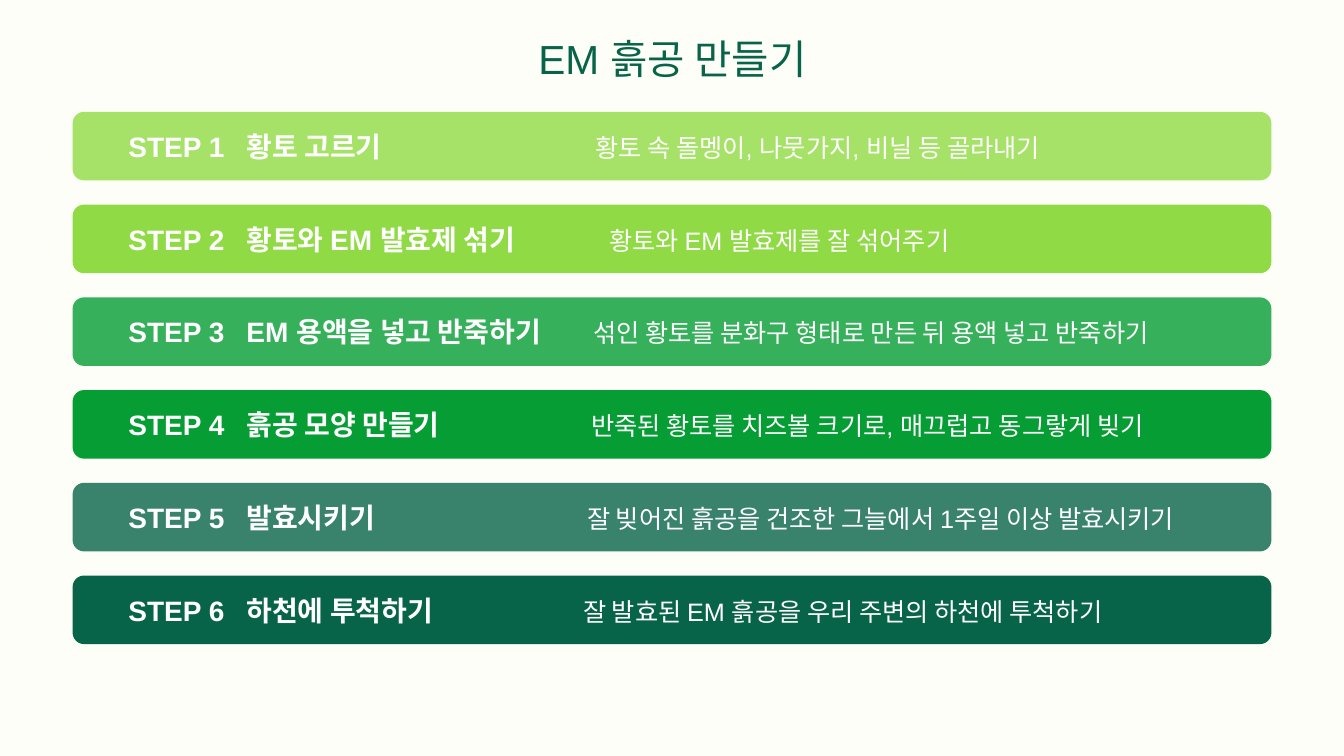
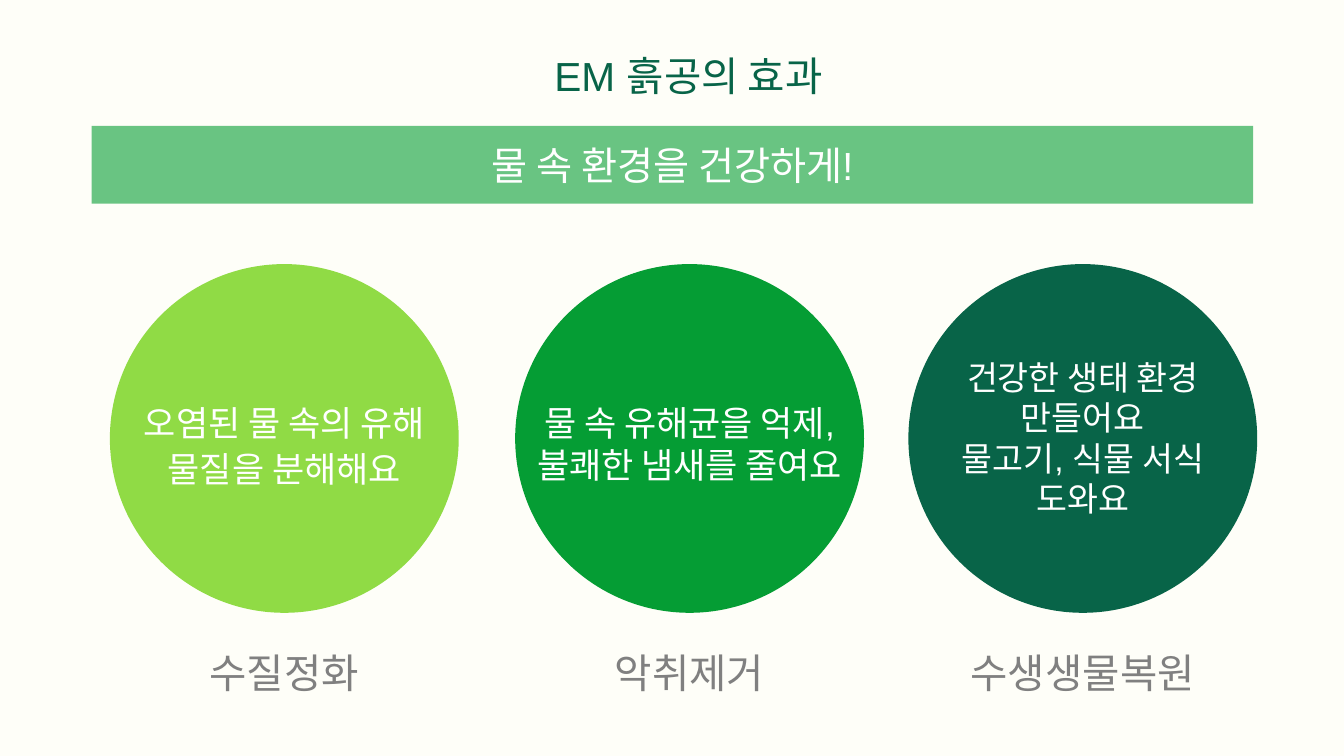
"""Two slides on EM soil balls: the six making steps and the three effects."""
from lxml.etree import SubElement
from pptx import Presentation
from pptx.dml.color import RGBColor
from pptx.enum.shapes import MSO_SHAPE
from pptx.enum.text import MSO_ANCHOR, PP_ALIGN
from pptx.oxml.ns import qn
from pptx.util import Inches, Pt

COLORS = {
    "paper": "FEFEF8", "white": "FFFFFF", "grey": "808080", "mint": "69C482",
    "lime": "90DB45", "green": "059D34", "forest": "086448",
}
STEPS_TITLE = "EM 흙공 만들기"
STEPS = [
    ("황토 고르기", "황토 속 돌멩이, 나뭇가지, 비닐 등 골라내기", "lime", 80, 5.87),
    ("황토와 EM 발효제 섞기", "황토와 EM 발효제를 잘 섞어주기", "lime", 100, 6.01),
    ("EM 용액을 넣고 반죽하기", "섞인 황토를 분화구 형태로 만든 뒤 용액 넣고 반죽하기", "green", 80, 5.85),
    ("흙공 모양 만들기", "반죽된 황토를 치즈볼 크기로, 매끄럽고 동그랗게 빚기", "green", 100, 5.83),
    ("발효시키기", "잘 빚어진 흙공을 건조한 그늘에서 1주일 이상 발효시키기", "forest", 80, 5.79),
    ("하천에 투척하기", "잘 발효된 EM 흙공을 우리 주변의 하천에 투척하기", "forest", 100, 5.75),
]
EFFECTS_TITLE = "EM 흙공의 효과"
SLOGAN = "물 속 환경을 건강하게!"
EFFECTS = [
    ("수질정화", ["오염된 물 속의 유해 물질을 분해해요"], "lime", 1.09, 4.4, 25, 1.1),
    ("악취제거", ["물 속 유해균을 억제,\v불쾌한 냄새를 줄여요"], "green", 5.11, 4.4, 25, 1.0),
    ("수생생물복원", ["건강한 생태 환경 만들어요", "물고기, 식물 서식 도와요"], "forest", 9.01, 4.34, 24, 1.0),
]

BAR_LEFT, BAR_TOP, BAR_WIDTH, BAR_HEIGHT, BAR_PITCH = 0.72, 1.11, 11.89, 0.68, 0.92
STEP_LEFT, HEADING_LEFT = 1.24, 2.41
CIRCLE_TOP, CIRCLE_SIZE = 2.62, 3.46
CAPTION_TOP, CAPTION_WIDTH = 6.36, 3.02
TITLE_SIZE, TITLE_HEIGHT = 29, 0.62
FRAME = {
    "word_wrap": True, "vertical_anchor": MSO_ANCHOR.MIDDLE,
    "margin_left": Inches(0.1), "margin_right": Inches(0.1),
    "margin_top": Inches(0.05), "margin_bottom": Inches(0.05),
}


def apply(target, values):
    for name, value in values.items():
        setattr(target, name, value)


def rgb(color):
    return RGBColor.from_string(COLORS[color])


def add_run(paragraph, text, size, color="white", bold=False):
    run = paragraph.add_run()
    run.text = text
    apply(run.font, {"name": "Arial", "size": Pt(size), "bold": bold})
    run.font.color.rgb = rgb(color)


def add_lines(shape, lines, size, color="white", spacing=1.0):
    frame = shape.text_frame
    apply(frame, FRAME)
    for index, line in enumerate(lines):
        paragraph = frame.add_paragraph() if index else frame.paragraphs[0]
        apply(paragraph, {"alignment": PP_ALIGN.CENTER, "line_spacing": spacing})
        for part_index, part in enumerate(line.split("\v")):
            if part_index:
                paragraph.add_line_break()
            add_run(paragraph, part, size, color)


def add_label(slide, box, lines, size, color="white", spacing=1.0):
    label = slide.shapes.add_textbox(*map(Inches, box))
    add_lines(label, lines, size, color, spacing)


def add_panel(slide, preset, box, color, opacity=100):
    panel = slide.shapes.add_shape(preset, *map(Inches, box))
    panel.shadow.inherit = False
    panel.fill.solid()
    panel.fill.fore_color.rgb = rgb(color)
    panel.line.fill.background()
    if opacity < 100:
        fill_color = panel.fill._xPr.find(qn("a:solidFill"))[0]
        SubElement(fill_color, qn("a:alpha"), val=str(opacity * 1000))
    return panel


def add_tab_stops(paragraph, lefts):
    stops = SubElement(paragraph._p.get_or_add_pPr(), qn("a:tabLst"))
    for left in lefts:
        SubElement(stops, qn("a:tab"), pos=str(Inches(left - STEP_LEFT)), algn="l")


def add_slide(deck, title, left, top):
    slide = deck.slides.add_slide(deck.slide_layouts[6])
    slide.background.fill.solid()
    slide.background.fill.fore_color.rgb = rgb("paper")
    add_label(slide, (left, top, 12, TITLE_HEIGHT), [title], TITLE_SIZE, "forest")
    return slide


def build_steps(deck):
    slide = add_slide(deck, STEPS_TITLE, 0.67, 0.27)
    for index, (heading, detail, color, opacity, detail_left) in enumerate(STEPS):
        box = (BAR_LEFT, BAR_TOP + index * BAR_PITCH, BAR_WIDTH, BAR_HEIGHT)
        bar = add_panel(slide, MSO_SHAPE.ROUNDED_RECTANGLE, box, color, opacity)
        apply(bar.text_frame, {**FRAME, "margin_left": Inches(STEP_LEFT - BAR_LEFT)})
        paragraph = bar.text_frame.paragraphs[0]
        paragraph.alignment = PP_ALIGN.LEFT
        add_tab_stops(paragraph, (HEADING_LEFT, detail_left))
        add_run(paragraph, f"STEP {index + 1}\t{heading}\t", 20, bold=True)
        add_run(paragraph, detail, 18)


def build_effects(deck):
    slide = add_slide(deck, EFFECTS_TITLE, 0.83, 0.44)
    banner = add_panel(slide, MSO_SHAPE.RECTANGLE, (0.91, 1.25, 11.52, 0.77), "mint")
    add_lines(banner, [SLOGAN], 28)
    for caption, lines, color, left, middle, size, spacing in EFFECTS:
        circle = (left, CIRCLE_TOP, CIRCLE_SIZE, CIRCLE_SIZE)
        add_panel(slide, MSO_SHAPE.OVAL, circle, color)
        text_box = (left, middle - CIRCLE_SIZE / 2, CIRCLE_SIZE, CIRCLE_SIZE)
        add_label(slide, text_box, lines, size, spacing=spacing)
        caption_left = left + (CIRCLE_SIZE - CAPTION_WIDTH) / 2
        caption_box = (caption_left, CAPTION_TOP, CAPTION_WIDTH, TITLE_HEIGHT)
        add_label(slide, caption_box, [caption], TITLE_SIZE, "grey")


def main():
    deck = Presentation()
    apply(deck, {"slide_width": Inches(13.33), "slide_height": Inches(7.5)})
    build_steps(deck)
    build_effects(deck)
    deck.save("out.pptx")


if __name__ == "__main__":
    main()
